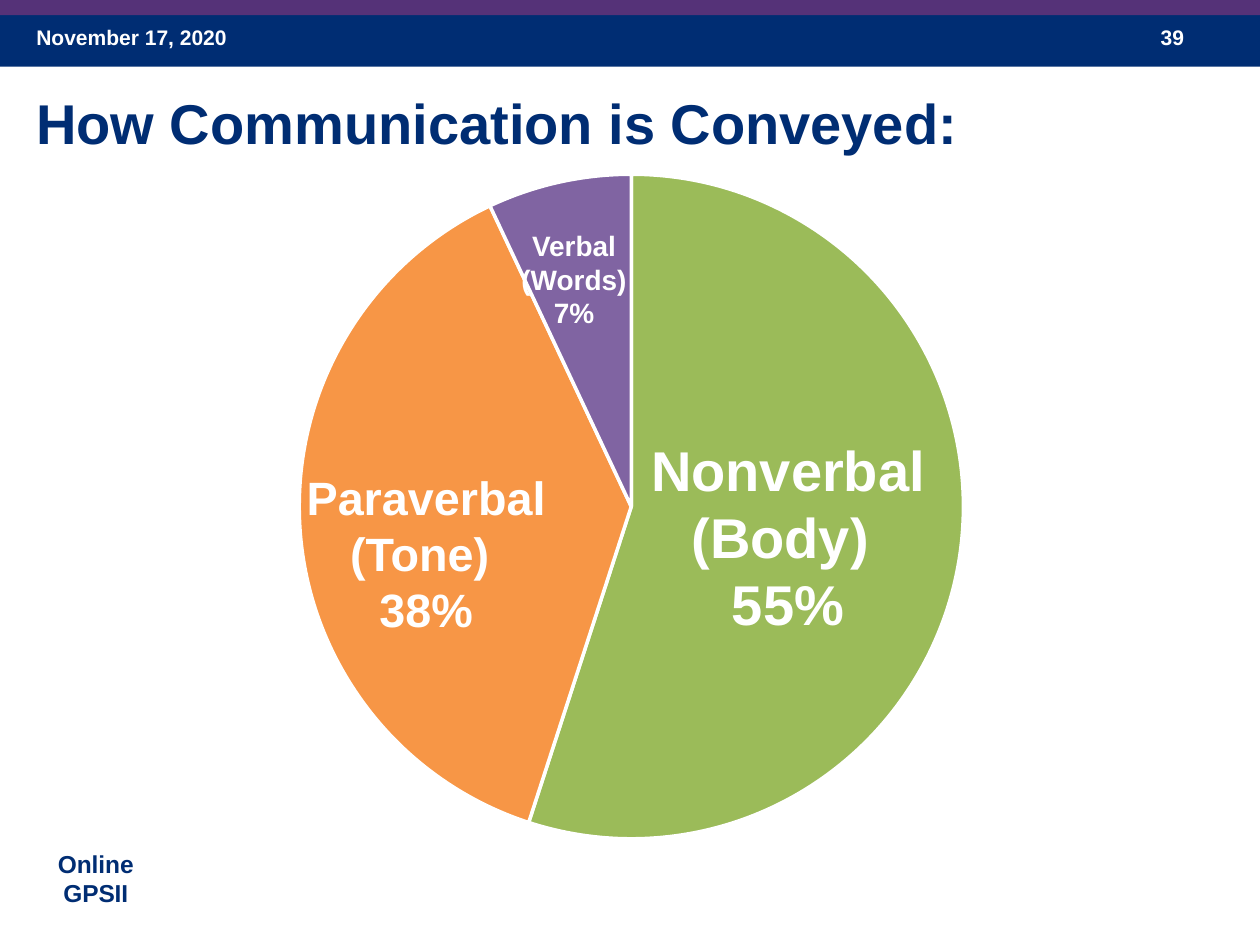
from pptx import Presentation
from pptx.chart.data import CategoryChartData
from pptx.dml.color import RGBColor
from pptx.enum.chart import XL_CHART_TYPE
from pptx.enum.shapes import MSO_SHAPE
from pptx.enum.text import PP_ALIGN
from pptx.oxml import parse_xml
from pptx.oxml.ns import nsdecls
from pptx.util import Cm, Pt

PIE = XL_CHART_TYPE.PIE
RECTANGLE = MSO_SHAPE.RECTANGLE
LEFT, CENTER = PP_ALIGN.LEFT, PP_ALIGN.CENTER

NAVY = RGBColor(0x00, 0x2D, 0x73)
PURPLE = RGBColor(0x55, 0x32, 0x78)
WHITE = RGBColor(0xFF, 0xFF, 0xFF)
BLACK = RGBColor(0x00, 0x00, 0x00)
GREEN = RGBColor(0x9B, 0xBB, 0x59)
ORANGE = RGBColor(0xF7, 0x96, 0x46)
VIOLET = RGBColor(0x80, 0x64, 0xA2)

# Plot area as fractions of the chart frame
PLOT = {"x": 0.23, "y": 0.03, "w": 0.55, "h": 0.93}


def set_font(font, **values):
    for name, value in values.items():
        if name == "color":
            font.color.rgb = value
        else:
            setattr(font, name, value)


def add_band(page, top, height, color):
    band = page.shapes.add_shape(RECTANGLE, 0, Cm(top), Cm(19.05), Cm(height))
    band.shadow.inherit = False
    band.fill.solid()
    band.fill.fore_color.rgb = color
    band.line.fill.background()


def add_text(page, area, lines, size, color, align=CENTER):
    box = page.shapes.add_textbox(*(Cm(length) for length in area))
    frame = box.text_frame
    frame.word_wrap = True
    for index, line in enumerate(lines):
        para = frame.paragraphs[0] if index == 0 else frame.add_paragraph()
        para.alignment = align
        span = para.add_run()
        span.text = line
        set_font(span.font, name="Arial", size=Pt(size), bold=True, color=color)


def add_pie(page, area, values, colors):
    data = CategoryChartData()
    data.categories = [str(number) for number in range(1, len(values) + 1)]
    data.add_series("Series 1", values)
    chart = page.shapes.add_chart(PIE, *(Cm(length) for length in area), data).chart
    chart.has_legend = False
    chart.has_title = False
    set_font(chart.font, name="Calibri", size=Pt(10), color=BLACK)
    plot = chart.plots[0]
    plot.vary_by_categories = True
    for index, color in enumerate(colors):
        wedge = plot.series[0].points[index].format
        wedge.fill.solid()
        wedge.fill.fore_color.rgb = color
        wedge.line.color.rgb = WHITE
        wedge.line.width = Pt(1.5)

    # Fix the size of the pie within its frame
    plot_area = chart._chartSpace.chart.plotArea
    for layout in plot_area.xpath("c:layout"):
        plot_area.remove(layout)
    sides = "".join(f'<c:{side} val="{share}"/>' for side, share in PLOT.items())
    plot_area.insert(0, parse_xml(
        f'<c:layout {nsdecls("c")}><c:manualLayout><c:layoutTarget val="inner"/>'
        f'<c:xMode val="edge"/><c:yMode val="edge"/>{sides}'
        "</c:manualLayout></c:layout>"))


def main():
    deck = Presentation()
    deck.slide_width, deck.slide_height = Cm(19.05), Cm(14.28)
    page = deck.slides.add_slide(deck.slide_layouts[6])

    # Header
    add_band(page, 0.18, 0.83, NAVY)
    add_band(page, 0, 0.23, PURPLE)
    add_text(page, (0.3, 0.25, 4.45, 0.76), ["November 17, 2020"], 9, WHITE, LEFT)
    add_text(page, (17.3, 0.25, 1.42, 0.76), ["39"], 9, WHITE, LEFT)

    # Title and course tag
    add_text(page, (0.3, 1.22, 18.08, 1.78), ["How Communication is Conveyed:"],
             24, NAVY, LEFT)
    add_text(page, (0.56, 12.7, 1.78, 1.02), ["Online", "GPSII"], 10.5, NAVY)

    # Pie and its labels
    add_pie(page, (0.3, 2.31, 18.31, 10.8), (55, 38, 7), (GREEN, ORANGE, VIOLET))
    add_text(page, (9.35, 6.45, 5.13, 3.3), ["Nonverbal", "(Body) ", "55%"], 24, WHITE)
    add_text(page, (4.22, 6.96, 4.45, 2.79), ["Paraverbal", "(Tone) ", "38%"], 20, WHITE)
    add_text(page, (7.37, 3.33, 2.62, 1.78), ["Verbal", "(Words)", "7%"], 12, WHITE)

    deck.save("out.pptx")


if __name__ == "__main__":
    main()
